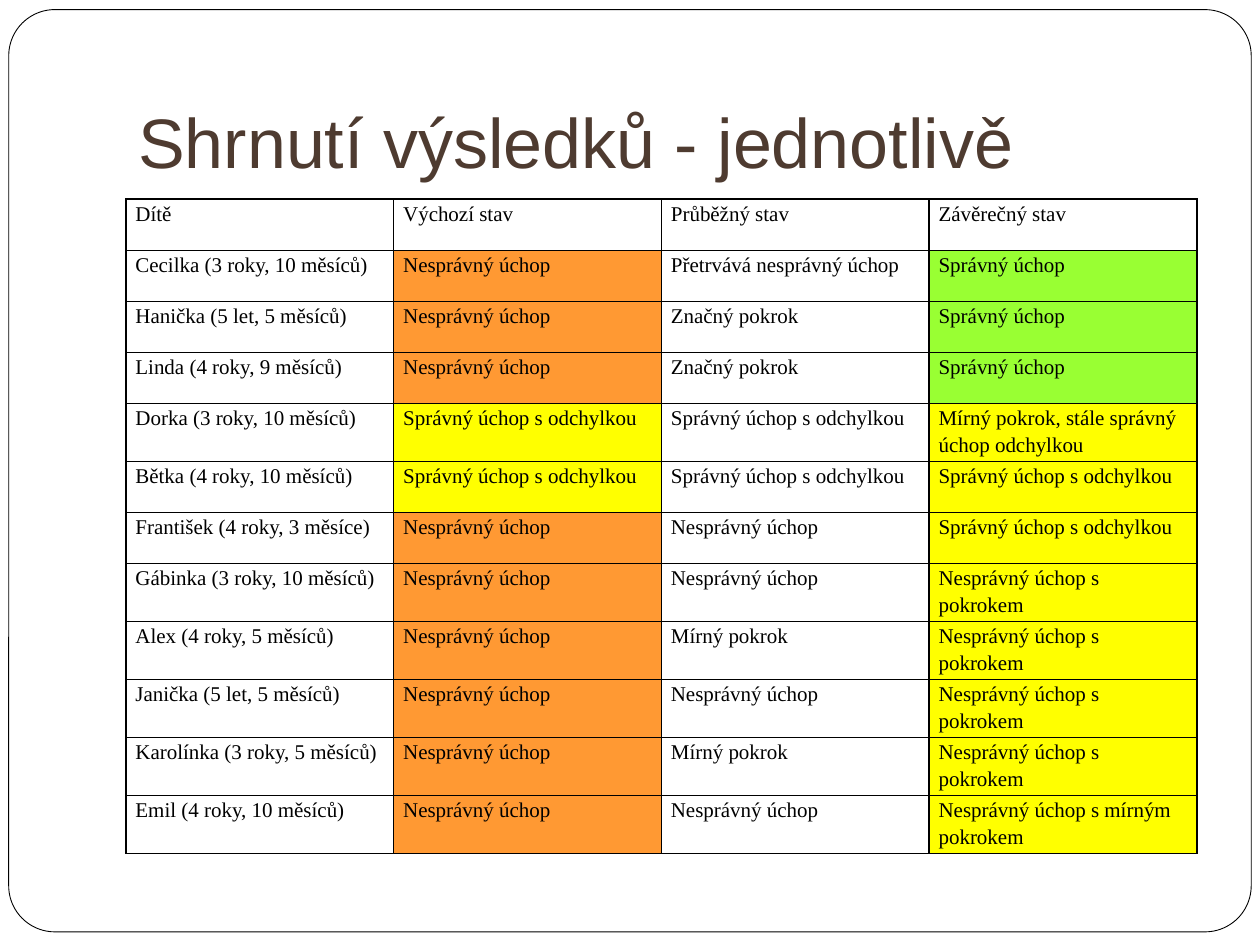
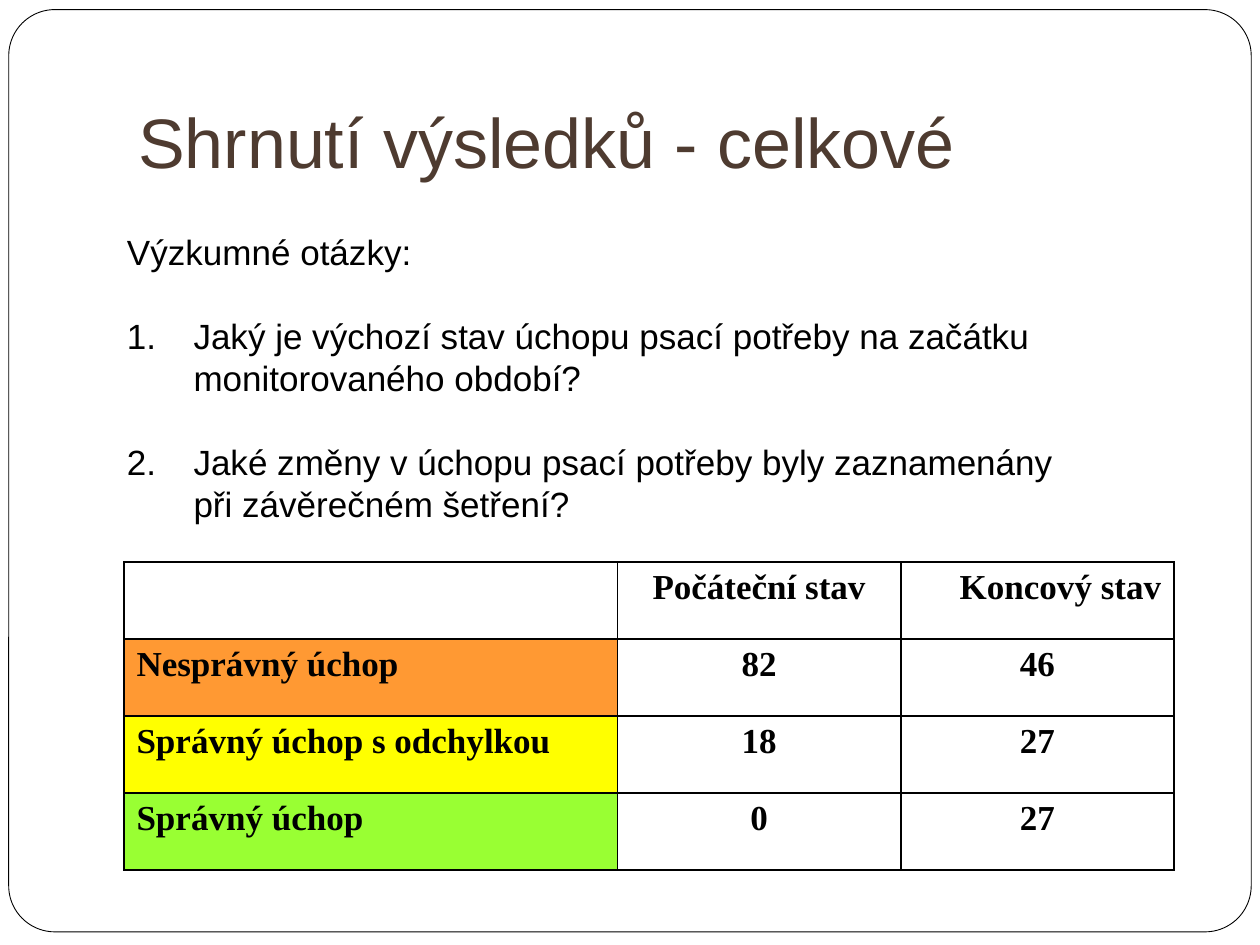
from dataclasses import dataclass

from lxml import etree
from pptx import Presentation
from pptx.dml.color import RGBColor
from pptx.enum import shapes, text
from pptx.oxml import ns
from pptx.util import Pt

BLACK = RGBColor(0, 0, 0)
WHITE = RGBColor(0xFF, 0xFF, 0xFF)
BROWN = RGBColor(0x4E, 0x3B, 0x30)
ORANGE = RGBColor(0xFF, 0x99, 0x33)
YELLOW = RGBColor(0xFF, 0xFF, 0)
GREEN = RGBColor(0x99, 0xFF, 0x33)

SANS = "Arial"
SERIF = "Times New Roman"
LEFT, MID, RIGHT = text.PP_ALIGN.LEFT, text.PP_ALIGN.CENTER, text.PP_ALIGN.RIGHT

WRONG = "Nesprávný úchop"
RIGHTLY = "Správný úchop"
NEARLY = "Správný úchop s odchylkou"
BETTER = "Nesprávný úchop s pokrokem"
MILD = "Mírný pokrok"
MARKED = "Značný pokrok"

START = {WRONG: ORANGE, NEARLY: YELLOW}
FINAL = {RIGHTLY: GREEN}  # every other final state is yellow

CHILDREN = [
    ("Cecilka (3 roky, 10 měsíců)", WRONG, "Přetrvává nesprávný úchop", RIGHTLY),
    ("Hanička (5 let, 5 měsíců)", WRONG, MARKED, RIGHTLY),
    ("Linda (4 roky, 9 měsíců)", WRONG, MARKED, RIGHTLY),
    ("Dorka (3 roky, 10 měsíců)", NEARLY, NEARLY,
     "Mírný pokrok, stále správný úchop odchylkou"),
    ("Bětka (4 roky, 10 měsíců)", NEARLY, NEARLY, NEARLY),
    ("František (4 roky, 3 měsíce)", WRONG, WRONG, NEARLY),
    ("Gábinka (3 roky, 10 měsíců)", WRONG, WRONG, BETTER),
    ("Alex (4 roky, 5 měsíců)", WRONG, MILD, BETTER),
    ("Janička (5 let, 5 měsíců)", WRONG, WRONG, BETTER),
    ("Karolínka (3 roky, 5 měsíců)", WRONG, MILD, BETTER),
    ("Emil (4 roky, 10 měsíců)", WRONG, WRONG, "Nesprávný úchop s mírným pokrokem"),
]
TOTALS = [(WRONG, "82", "46", ORANGE), (NEARLY, "18", "27", YELLOW),
          (RIGHTLY, "0", "27", GREEN)]
ASKED = [
    "Jaký je výchozí stav úchopu psací potřeby na začátku\vmonitorovaného období?",
    "Jaké změny v úchopu psací potřeby byly zaznamenány\vpři závěrečném šetření?",
]


@dataclass
class Cell:
    words: str
    fill: RGBColor | None = None
    align: text.PP_ALIGN = LEFT


@dataclass
class Grid:
    left: float
    top: float
    cols: list[float]
    height: float
    size: float
    bold: bool
    inset: tuple[float, float]
    pitch: float


def style(par, face: str, size: float, color: RGBColor, bold: bool = False) -> None:
    for run in par.runs:
        font = run.font
        font.name, font.size, font.bold = face, Pt(size), bold
        font.color.rgb = color


def border(cell) -> None:
    props = cell._tc.get_or_add_tcPr()
    for spot, side in enumerate(("a:lnL", "a:lnR", "a:lnT", "a:lnB")):
        line = etree.Element(ns.qn(side), w=str(Pt(1)))
        fill = etree.SubElement(line, ns.qn("a:solidFill"))
        etree.SubElement(fill, ns.qn("a:srgbClr"), val=str(BLACK))
        props.insert(spot, line)


def add_grid(slide, grid: Grid, rows: list[list[Cell]]) -> None:
    table = slide.shapes.add_table(
        len(rows), len(grid.cols), Pt(grid.left), Pt(grid.top),
        Pt(sum(grid.cols)), Pt(grid.height * len(rows))).table
    table.first_row = table.horz_banding = False
    for col, width in zip(table.columns, grid.cols):
        col.width = Pt(width)
    side, edge = map(Pt, grid.inset)
    for row, items in zip(table.rows, rows):
        row.height = Pt(grid.height)
        for cell, item in zip(row.cells, items):
            cell.margin_left = cell.margin_right = side
            cell.margin_top = cell.margin_bottom = edge
            if item.fill is None:
                cell.fill.background()
            else:
                cell.fill.solid()
                cell.fill.fore_color.rgb = item.fill
            border(cell)
            par = cell.text_frame.paragraphs[0]
            par.text = item.words
            par.alignment, par.line_spacing = item.align, grid.pitch
            style(par, SERIF, grid.size, BLACK, grid.bold)


def add_box(slide, left: float, top: float, width: float, height: float):
    frame = slide.shapes.add_textbox(
        Pt(left), Pt(top), Pt(width), Pt(height)).text_frame
    frame.word_wrap = True
    return frame


def add_page(deck, title: str):
    """Add a slide with the rounded frame and the title."""
    slide = deck.slides.add_slide(deck.slide_layouts[6])
    edge = slide.shapes.add_shape(
        shapes.MSO_SHAPE.ROUNDED_RECTANGLE, Pt(5), Pt(5.5), Pt(710), Pt(527))
    edge.adjustments[0] = 0.05
    edge.shadow.inherit = False
    edge.fill.solid()
    edge.fill.fore_color.rgb = WHITE
    edge.line.color.rgb, edge.line.width = BLACK, Pt(0.5)
    frame = add_box(slide, 72, 21.6, 612, 90)
    frame.vertical_anchor = text.MSO_ANCHOR.BOTTOM
    frame.margin_bottom = Pt(7.2)
    frame.text = title
    style(frame.paragraphs[0], SANS, 40, BROWN)
    return slide


def number(par) -> None:
    """Give the paragraph a hanging automatic number."""
    props = par._p.get_or_add_pPr()
    props.set("marL", str(Pt(38)))
    props.set("indent", str(-Pt(38)))
    etree.SubElement(props, ns.qn("a:buFont"), typeface="+mj-lt")
    etree.SubElement(props, ns.qn("a:buAutoNum"), type="arabicPeriod")


def add_asked(slide) -> None:
    frame = add_box(slide, 65.5, 128.2, 560, 177)
    frame.text = "Výzkumné otázky:"
    for words in ASKED:
        par = frame.add_paragraph()
        par.text = words
        par.space_before = Pt(24)
        number(par)
    for par in frame.paragraphs:
        par.line_spacing = Pt(24)
        style(par, SANS, 20, BLACK)


def main() -> None:
    deck = Presentation()
    deck.slide_width, deck.slide_height = Pt(720), Pt(540)

    each = add_page(deck, "Shrnutí výsledků - jednotlivě")
    heads = ["Dítě", "Výchozí stav", "Průběžný stav", "Závěrečný stav"]
    rows = [[Cell(head) for head in heads]]
    for child, start, mid, final in CHILDREN:
        rows.append([Cell(child), Cell(start, START[start]), Cell(mid),
                     Cell(final, FINAL.get(final, YELLOW))])
    add_grid(each, Grid(72, 113.8, [153] * 4, 29.2, 12, False, (5.4, 0), 1.15), rows)

    whole = add_page(deck, "Shrnutí výsledků - celkové")
    rows = [[Cell(""), Cell("Počáteční stav", align=MID),
             Cell("Koncový stav", align=RIGHT)]]
    for state, start, final, color in TOTALS:
        rows.append([Cell(state, color), Cell(start, align=MID),
                     Cell(final, align=MID)])
    add_grid(whole, Grid(70.8, 321.1, [282, 162, 156], 44, 20, True, (7.2, 3.6), 1), rows)
    add_asked(whole)

    deck.save("out.pptx")


if __name__ == "__main__":
    main()
